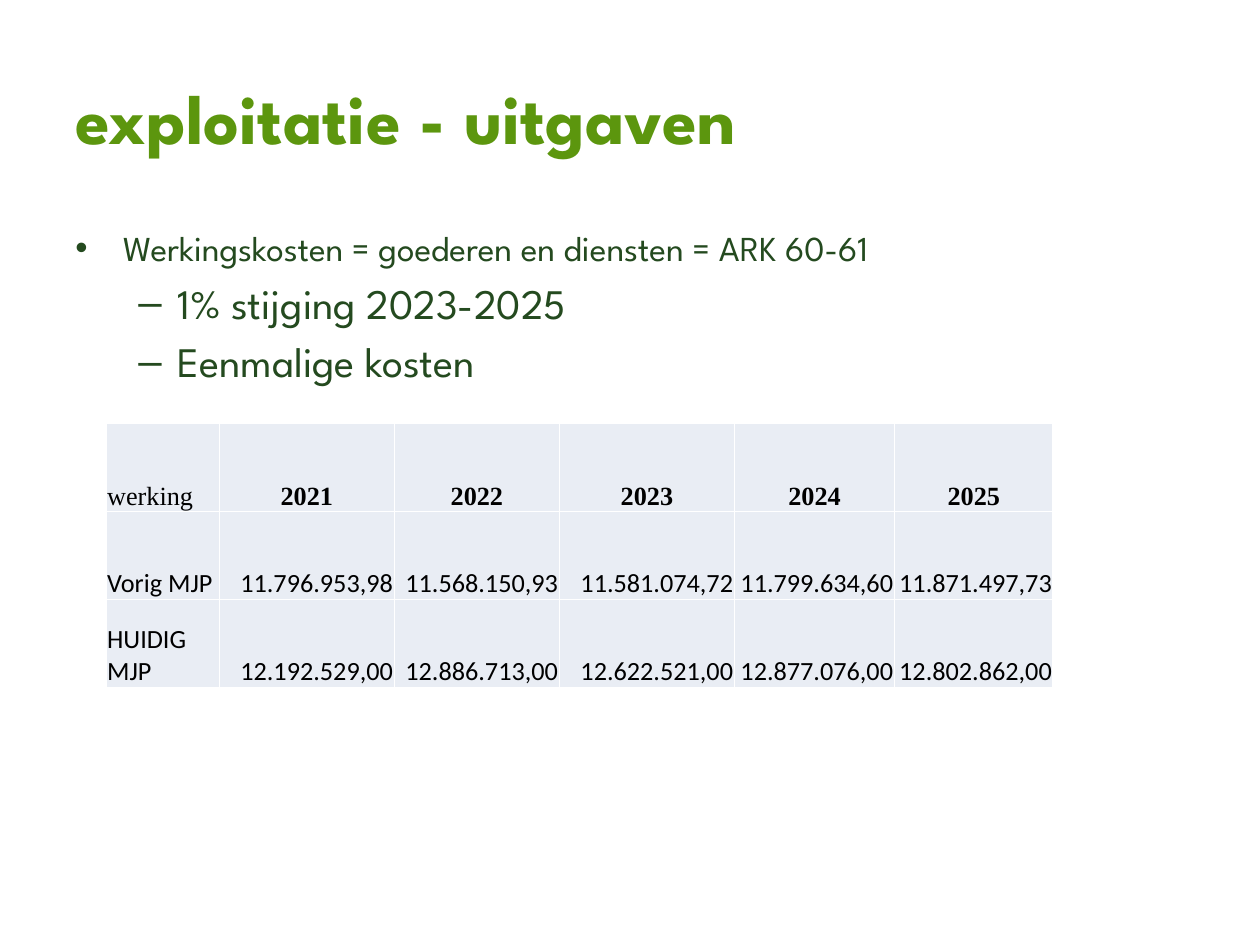
from lxml import etree
from pptx import Presentation
from pptx import util as u
from pptx.dml.color import RGBColor
from pptx.enum import text
from pptx.oxml.ns import qn

HEADING_FONT = "League Spartan"
GREEN, DARK_GREEN = "5C960E", "244A1F"
BLACK, WHITE, CELL_FILL = "000000", "FFFFFF", "E9EDF4"

# text, size, level, left margin, hanging indent
BULLETS = [
    ("Werkingskosten = goederen en diensten = ARK 60-61", 20, 0, 0.38, -0.38),
    ("1% stijging 2023-2025", 24, 1, 0.81, -0.31),
    ("Eenmalige kosten", 24, 1, 0.81, -0.31),
]
BULLET_CHARS = "•–"

COST_ROWS = [
    ["werking", "2021", "2022", "2023", "2024", "2025"],
    ["Vorig MJP", "11.796.953,98", "11.568.150,93", "11.581.074,72",
     "11.799.634,60", "11.871.497,73"],
    ["HUIDIG MJP", "12.192.529,00", "12.886.713,00", "12.622.521,00",
     "12.877.076,00", "12.802.862,00"],
]
COL_WIDTHS = [0.9, 1.39, 1.31, 1.39, 1.27, 1.26]
ROW_HEIGHT = 0.7


def rgb(value):
    return RGBColor.from_string(value)


def style_runs(p, size, font, color, bold=False):
    for r in p.runs:
        r.font.size = u.Pt(size)
        r.font.name = font
        r.font.bold = bold
        r.font.color.rgb = rgb(color)


def add_text_frame(slide, left, top, width, height, anchor):
    sp = slide.shapes.add_textbox(*map(u.Inches, (left, top, width, height)))
    tf = sp.text_frame
    tf.word_wrap = True
    tf.vertical_anchor = anchor
    return tf


def add_title(slide, title):
    tf = add_text_frame(slide, 0.5, 0.3, 8.2, 1.25, text.MSO_ANCHOR.MIDDLE)
    tf.text = title
    style_runs(tf.paragraphs[0], 40, HEADING_FONT, GREEN, bold=True)


def set_bullet(p, level, margin, indent, spaced):
    p.level = level
    pPr = p._p.get_or_add_pPr()
    pPr.set("marL", str(u.Inches(margin)))
    pPr.set("indent", str(u.Inches(indent)))
    if spaced:
        before = etree.SubElement(pPr, qn("a:spcBef"))
        etree.SubElement(before, qn("a:spcPct"), val="20000")
    etree.SubElement(pPr, qn("a:buFont"), typeface="Arial")
    etree.SubElement(pPr, qn("a:buChar"), char=BULLET_CHARS[level])


def add_bullets(slide, bullets):
    tf = add_text_frame(slide, 0.5, 1.75, 8.2, 4.95, text.MSO_ANCHOR.TOP)
    for i, (line, size, level, margin, indent) in enumerate(bullets):
        p = tf.add_paragraph() if i else tf.paragraphs[0]
        p.text = line
        set_bullet(p, level, margin, indent, spaced=i > 0)
        style_runs(p, size, HEADING_FONT, DARK_GREEN)


def set_borders(cell, color, width):
    tcPr = cell._tc.get_or_add_tcPr()
    for side in ("lnL", "lnR", "lnT", "lnB"):
        ln = etree.SubElement(tcPr, qn(f"a:{side}"), w=str(u.Pt(width)))
        fill = etree.SubElement(ln, qn("a:solidFill"))
        etree.SubElement(fill, qn("a:srgbClr"), val=color)


def fill_cell(cell, value, is_header, is_label):
    set_borders(cell, WHITE, 1)
    cell.fill.solid()
    cell.fill.fore_color.rgb = rgb(CELL_FILL)
    cell.vertical_anchor = text.MSO_ANCHOR.BOTTOM
    cell.margin_left = cell.margin_right = cell.margin_top = u.Inches(0.01)
    cell.margin_bottom = 0

    cell.text = value
    p = cell.text_frame.paragraphs[0]
    if is_label:
        p.alignment = text.PP_ALIGN.LEFT
    else:
        p.alignment = text.PP_ALIGN.CENTER if is_header else text.PP_ALIGN.RIGHT
    font = "Times New Roman" if is_header else "Calibri"
    style_runs(p, 15, font, BLACK, bold=is_header and not is_label)


def add_cost_table(slide, rows):
    frame = slide.shapes.add_table(
        len(rows), len(COL_WIDTHS), u.Inches(0.84), u.Inches(3.36),
        u.Inches(sum(COL_WIDTHS)), u.Inches(ROW_HEIGHT * len(rows)))
    table = frame.table
    table.first_row = table.horz_banding = False
    for column, width in zip(table.columns, COL_WIDTHS):
        column.width = u.Inches(width)
    for i, row in enumerate(rows):
        table.rows[i].height = u.Inches(ROW_HEIGHT)
        for j, value in enumerate(row):
            fill_cell(table.cell(i, j), value, i == 0, j == 0)


def main():
    prs = Presentation()
    prs.slide_width, prs.slide_height = u.Inches(10), u.Inches(7.5)
    slide = prs.slides.add_slide(prs.slide_layouts[6])

    # Heading and bullets
    add_title(slide, "exploitatie - uitgaven")
    add_bullets(slide, BULLETS)

    # Operating costs per year
    add_cost_table(slide, COST_ROWS)

    prs.save("out.pptx")


if __name__ == "__main__":
    main()
